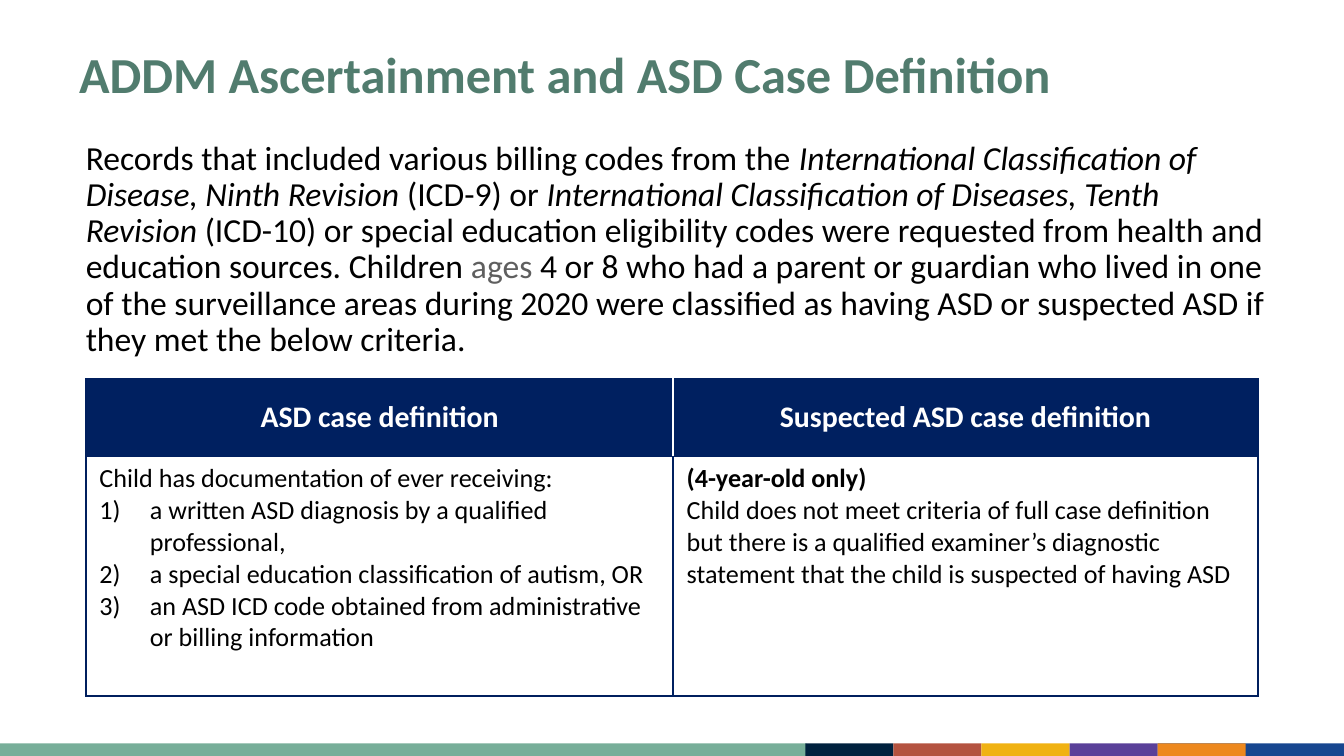
from dataclasses import dataclass

from lxml import etree
from pptx import Presentation
from pptx.dml.color import RGBColor
from pptx.enum.shapes import MSO_SHAPE
from pptx.enum.text import MSO_ANCHOR, PP_ALIGN
from pptx.oxml.ns import qn
from pptx.util import Pt

RECTANGLE = MSO_SHAPE.RECTANGLE
TOP, MIDDLE = MSO_ANCHOR.TOP, MSO_ANCHOR.MIDDLE
LEFT, CENTER = PP_ALIGN.LEFT, PP_ALIGN.CENTER

FONT = "Calibri"
COLORS = {
    "title": "517C6E", "text": "000000", "muted": "5F5F5F", "white": "FFFFFF",
    "header": "002060", "edge": "001F5E",
    "green": "77AE99", "navy": "00213E", "rust": "B45340", "gold": "F0B213",
    "purple": "5A4099", "blue": "17468F", "orange": "ED881E",
}
STRIP_TOP, STRIP_HEIGHT = 398.2, 8.6
STRIP_START, STRIP_STEP = 431.4, 47.2
NUMBER_INDENT = 27


@dataclass(frozen=True)
class Span:
    text: str
    size: float
    color: str = "text"
    bold: bool = False
    italic: bool = False


@dataclass(frozen=True)
class Para:
    spans: tuple[Span, ...]
    align: PP_ALIGN = LEFT
    line_spacing: float = 1.0
    margin: float = 0
    numbered: bool = False


@dataclass(frozen=True)
class Box:
    left: float
    top: float
    width: float
    height: float

    def lengths(self) -> tuple[Pt, ...]:
        return Pt(self.left), Pt(self.top), Pt(self.width), Pt(self.height)


@dataclass(frozen=True)
class Edge:
    color: str = "edge"
    width: float = 0.75


def rgb(name: str) -> RGBColor:
    return RGBColor.from_string(COLORS[name])


def apply(target, values: dict) -> None:
    for name, value in values.items():
        setattr(target, name, value)


def write_paras(frame, paras: tuple[Para, ...]) -> None:
    for index, item in enumerate(paras):
        para = frame.add_paragraph() if index else frame.paragraphs[0]
        apply(para, {"alignment": item.align, "line_spacing": item.line_spacing})
        properties = para._p.get_or_add_pPr()
        properties.set("marL", str(Pt(item.margin)))
        if item.numbered:
            properties.set("indent", str(-Pt(item.margin)))
            etree.SubElement(properties, qn("a:buFont"), typeface="+mj-lt")
            etree.SubElement(properties, qn("a:buAutoNum"), type="arabicParenR")
        for span in item.spans:
            run = para.add_run()
            run.text = span.text
            apply(run.font, {"name": FONT, "size": Pt(span.size),
                             "bold": span.bold, "italic": span.italic})
            run.font.color.rgb = rgb(span.color)


def add_text(page, box: Box, paras: tuple[Para, ...], anchor: MSO_ANCHOR) -> None:
    frame = page.shapes.add_textbox(*box.lengths()).text_frame
    apply(frame, {"word_wrap": True, "vertical_anchor": anchor})
    write_paras(frame, paras)


def add_bar(page, box: Box, color: str) -> None:
    shape = page.shapes.add_shape(RECTANGLE, *box.lengths())
    shape.shadow.inherit = False
    shape.fill.solid()
    shape.fill.fore_color.rgb = rgb(color)
    shape.line.fill.background()


def set_borders(cell, edges: dict[str, Edge]) -> None:
    """Put the border lines ahead of the fill, as the schema requires."""
    properties = cell._tc.get_or_add_tcPr()
    for index, side in enumerate("LRTB"):
        edge = edges.get(side, Edge())
        line = etree.Element(qn(f"a:ln{side}"), w=str(Pt(edge.width)))
        fill = etree.SubElement(line, qn("a:solidFill"))
        etree.SubElement(fill, qn("a:srgbClr"), val=COLORS[edge.color])
        properties.insert(index, line)


def fill_cell(cell, paras: tuple[Para, ...], is_header: bool, inner_side: str) -> None:
    cell.vertical_anchor = MIDDLE if is_header else TOP
    cell.fill.solid()
    cell.fill.fore_color.rgb = rgb("header" if is_header else "white")
    set_borders(cell, {inner_side: Edge("white" if is_header else "header", 1)})
    write_paras(cell.text_frame, paras)


def header(text: str) -> tuple[Para, ...]:
    return (Para((Span(text, 16, "white", bold=True),), CENTER),)


def entry(text: str, bold: bool = False) -> Para:
    return Para((Span(text, 14, bold=bold),))


def numbered(text: str) -> Para:
    return Para((Span(text, 14),), margin=NUMBER_INDENT, numbered=True)


TITLE = (Para((Span("ADDM Ascertainment and ASD Case Definition", 27, "title", bold=True),),
              line_spacing=0.9),)
BODY = (Para((
    Span("Records that included various billing codes from the ", 18),
    Span("International Classification of Disease, Ninth Revision ", 18, italic=True),
    Span("(ICD-9) or ", 18),
    Span("International Classification of Diseases, Tenth Revision ", 18, italic=True),
    Span("(ICD-10) or special education eligibility codes were requested from "
         "health and education sources. Children", 18),
    Span(" ages ", 18, "muted"),
    Span("4 or 8 who had a parent or guardian who lived in one of the surveillance areas "
         "during 2020 were classified as having ASD or suspected ASD if they met the "
         "below criteria.", 18),
), line_spacing=0.9, margin=3.6),)
CELLS = (
    (header("ASD case definition"), header("Suspected ASD case definition")),
    ((entry("Child has documentation of ever receiving:"),
      numbered("a written ASD diagnosis by a qualified professional,"),
      numbered("a special education classification of autism, OR"),
      numbered("an ASD ICD code obtained from administrative or billing information")),
     (entry("(4-year-old only)", bold=True),
      entry("Child does not meet criteria of full case definition but there is a qualified "
            "examiner’s diagnostic statement that the child is suspected of having ASD"))),
)
COLUMN_WIDTHS = (314.6, 313.2)
ROW_HEIGHTS = (41.5, 128.4)


def add_definitions(page) -> None:
    box = Box(46.1, 203, sum(COLUMN_WIDTHS), sum(ROW_HEIGHTS))
    table = page.shapes.add_table(len(CELLS), len(CELLS[0]), *box.lengths()).table
    apply(table, {"first_row": True, "horz_banding": False})
    for column, width in zip(table.columns, COLUMN_WIDTHS):
        column.width = Pt(width)
    for row, height in zip(table.rows, ROW_HEIGHTS):
        row.height = Pt(height)
    for row_index, row_cells in enumerate(CELLS):
        for column_index, paras in enumerate(row_cells):
            fill_cell(table.cell(row_index, column_index), paras,
                      row_index == 0, "RL"[column_index])


def add_strip(page) -> None:
    add_bar(page, Box(0, STRIP_TOP, 432, STRIP_HEIGHT), "green")
    blue_left = STRIP_START + 4 * STRIP_STEP
    add_bar(page, Box(blue_left, STRIP_TOP, 720 - blue_left, STRIP_HEIGHT), "blue")
    for index, color in enumerate(("navy", "rust", "gold", "purple", "orange")):
        left = STRIP_START + index * STRIP_STEP
        add_bar(page, Box(left, STRIP_TOP, STRIP_STEP, STRIP_HEIGHT), color)


def main() -> None:
    deck = Presentation()
    apply(deck, {"slide_width": Pt(720), "slide_height": Pt(405)})
    page = deck.slides.add_slide(deck.slide_layouts[6])
    add_strip(page)
    add_text(page, Box(35.3, 20.2, 620.6, 42), TITLE, MIDDLE)
    add_text(page, Box(35.3, 72, 650.2, 126), BODY, TOP)
    add_definitions(page)
    deck.save("out.pptx")


if __name__ == "__main__":
    main()
